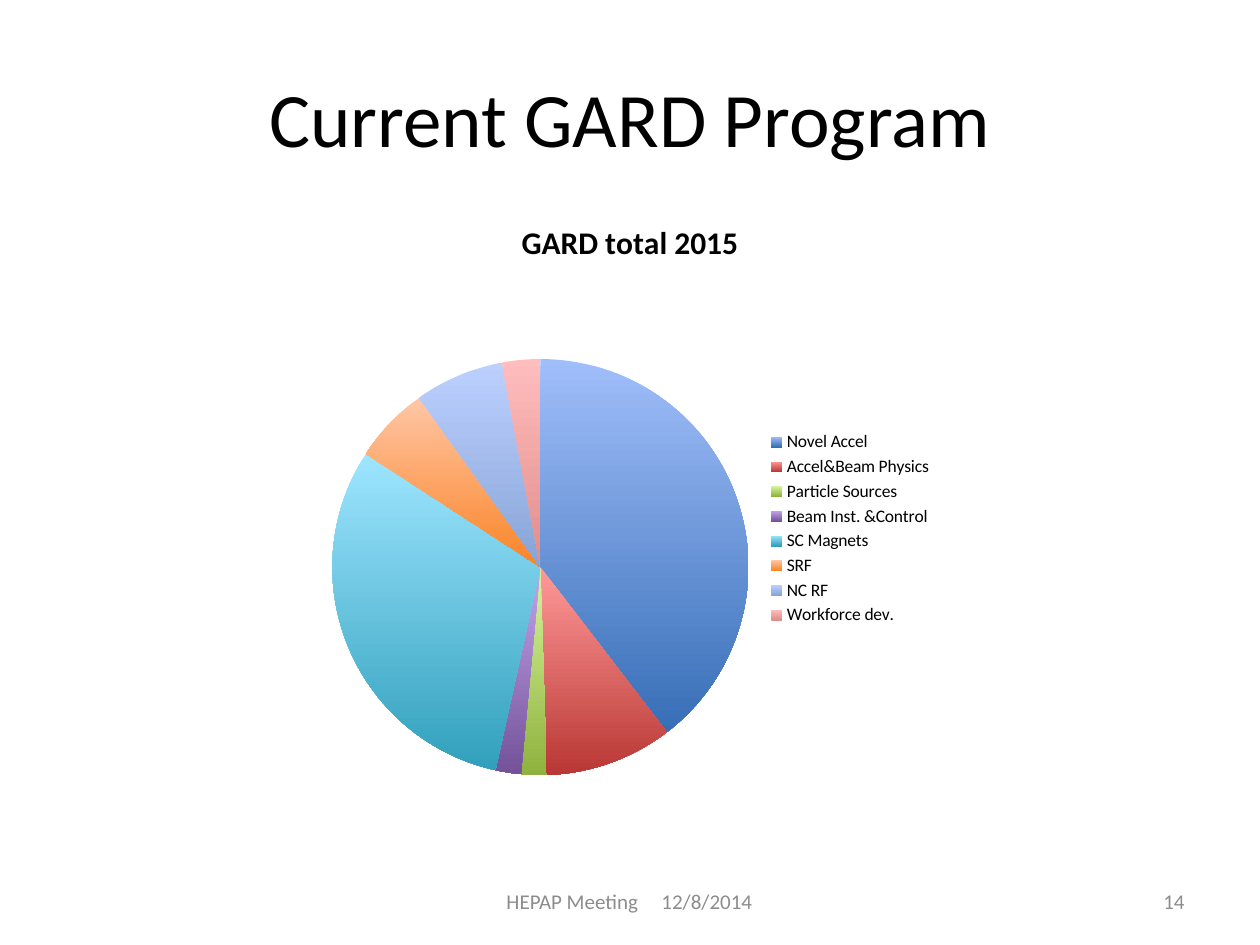
from pptx import Presentation
from pptx import util as u
from pptx.chart.data import CategoryChartData
from pptx.dml.color import RGBColor
from pptx.enum import chart as ch, text as t
from pptx.oxml import parse_xml
from pptx.oxml.ns import nsdecls

FONT = "Calibri"
# name, share, top colour, bottom colour
SHARES = [
    ("Novel Accel", 40, "A0BEFA", "376EB6"),
    ("Accel&Beam Physics", 10, "FF9A99", "B93734"),
    ("Particle Sources", 2, "D6F59D", "8FB23E"),
    ("Beam Inst. &Control", 2, "C3A5EC", "74529A"),
    ("SC Magnets", 31, "9EE5FF", "31A0BC"),
    ("SRF", 6, "FFC6A5", "FA8427"),
    ("NC RF", 7, "BCD0FF", "87A4D6"),
    ("Workforce dev.", 3, "FFBDBD", "E08D8B"),
]


def rgb(code):
    return RGBColor.from_string(code)


def style(font, size, color="000000", bold=False):
    font.name, font.size, font.bold = FONT, u.Pt(size), bold
    font.color.rgb = rgb(color)


def place(shape, left, top, width, height):
    shape.left, shape.top = u.Inches(left), u.Inches(top)
    shape.width, shape.height = u.Inches(width), u.Inches(height)


def add_run(par, words, size, color="000000"):
    run = par.add_run()
    run.text = words
    style(run.font, size, color)


def add_title(slide, words):
    title = slide.shapes.title
    place(title, 0.5, 0.3, 9, 1.25)
    title.text_frame.vertical_anchor = t.MSO_ANCHOR.MIDDLE
    par = title.text_frame.paragraphs[0]
    par.alignment = t.PP_ALIGN.CENTER
    add_run(par, words, 44)


def add_note(slide, words, left, width, align, inset=0.1, tab=None):
    """Add grey footer text, with an optional tab stop measured from the inset."""
    box = slide.shapes.add_textbox(
        u.Inches(left), u.Inches(6.95), u.Inches(width), u.Inches(0.4))
    frame = box.text_frame
    frame.word_wrap = True
    frame.vertical_anchor = t.MSO_ANCHOR.MIDDLE
    frame.margin_left = u.Inches(inset)
    par = frame.paragraphs[0]
    par.alignment = align
    if tab:
        par._p.get_or_add_pPr().append(parse_xml(
            f'<a:tabLst {nsdecls("a")}><a:tab pos="{u.Inches(tab)}" algn="l"/></a:tabLst>'))
    add_run(par, words, 12, "8C8C8C")


def shade(fill, top, bottom):
    fill.gradient()
    fill.gradient_angle = 270
    for stop, color in zip(fill.gradient_stops, (top, bottom)):
        stop.color.rgb = rgb(color)


def add_pie(slide):
    data = CategoryChartData()
    data.categories = [share[0] for share in SHARES]
    data.add_series("Series 1", [share[1] for share in SHARES])
    chart = slide.shapes.add_chart(
        ch.XL_CHART_TYPE.PIE, u.Inches(2.5), u.Inches(1.55),
        u.Inches(5), u.Inches(5.29), data).chart
    style(chart.font, 10)
    chart.has_title = True
    par = chart.chart_title.text_frame.paragraphs[0]
    add_run(par, "GARD total 2015", 18)
    par.runs[0].font.bold = True
    chart.has_legend = True
    chart.legend.position = ch.XL_LEGEND_POSITION.RIGHT
    chart.legend.include_in_layout = False
    style(chart.legend.font, 10)
    plot = chart.plots[0]
    plot.vary_by_categories = True
    for i, (_, _, top, bottom) in enumerate(SHARES):
        form = plot.series[0].points[i].format
        shade(form.fill, top, bottom)
        form.line.fill.background()


def main():
    prs = Presentation()
    prs.slide_width, prs.slide_height = u.Inches(10), u.Inches(7.5)
    slide = prs.slides.add_slide(prs.slide_layouts[5])
    add_title(slide, "Current GARD Program")
    add_note(slide, "HEPAP Meeting\t12/8/2014", 3.42, 3.17,
             t.PP_ALIGN.LEFT, inset=0.6, tab=1.23)
    add_note(slide, "14", 7.17, 2.33, t.PP_ALIGN.RIGHT)
    add_pie(slide)
    prs.save("out.pptx")


if __name__ == "__main__":
    main()
